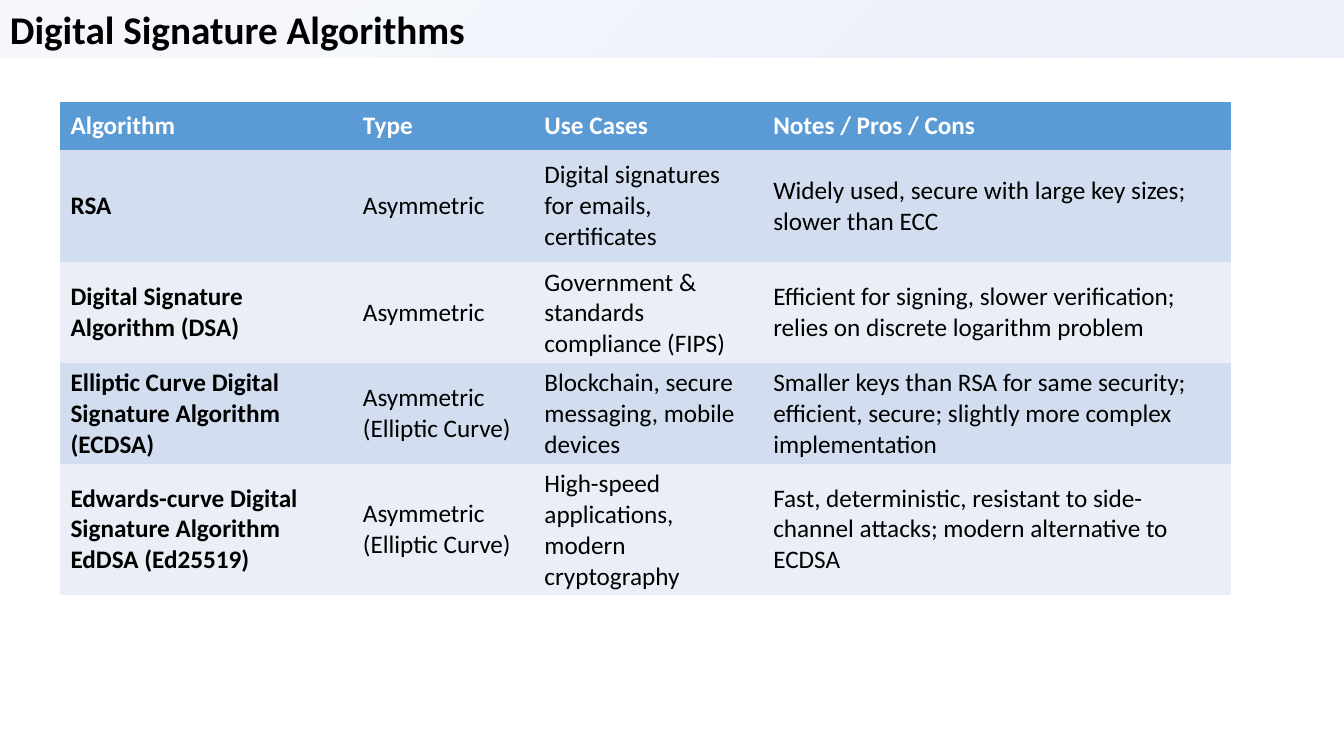
from dataclasses import dataclass

from pptx import Presentation
from pptx import util as u
from pptx.dml.color import RGBColor
from pptx.enum import shapes, text
from pptx.oxml import parse_xml
from pptx.oxml.ns import nsdecls, qn


@dataclass(frozen=True)
class Theme:
    font: str = "Calibri"
    title_size: int = 28
    table_size: int = 18
    ink: str = "000000"
    white: str = "FFFFFF"
    header: str = "5B9BD5"
    bands: tuple = ("D2DEEF", "EAEFF7")
    glow: str = "4472C4"
    glow_stops: tuple = ((26, 10), (76, 5))  # position %, opacity %


COL_WIDTHS = (2.9, 1.8, 2.27, 4.64)
ROW_HEIGHTS = (0.48, 1.11, 0.82, 0.79, 0.82)
ALGORITHMS = (
    ("Algorithm", "Type", "Use Cases", "Notes / Pros / Cons"),
    ("RSA", "Asymmetric", "Digital signatures for emails, certificates",
     "Widely used, secure with large key sizes; slower than ECC"),
    ("Digital Signature Algorithm (DSA)", "Asymmetric",
     "Government & standards compliance (FIPS)",
     "Efficient for signing, slower verification; "
     "relies on discrete logarithm problem"),
    ("Elliptic Curve Digital Signature Algorithm (ECDSA)",
     "Asymmetric (Elliptic Curve)",
     "Blockchain, secure messaging, mobile devices",
     "Smaller keys than RSA for same security; efficient, secure; "
     "slightly more complex implementation"),
    ("Edwards-curve Digital Signature Algorithm EdDSA (Ed25519)",
     "Asymmetric (Elliptic Curve)",
     "High-speed applications, modern cryptography",
     "Fast, deterministic, resistant to side-channel attacks; "
     "modern alternative to ECDSA"),
)


def write(tf, content, *, font, size, color, bold=False):
    tf.word_wrap = True
    p = tf.paragraphs[0]
    p.alignment = text.PP_ALIGN.LEFT
    r = p.add_run()
    r.text = content
    r.font.name = font
    r.font.size = u.Pt(size)
    r.font.bold = bold
    r.font.color.rgb = RGBColor.from_string(color)


class SlideBuilder:
    def __init__(self, slide, theme):
        self.s = slide
        self.theme = theme

    def glow_fill(self, sp):
        """Fill with a translucent radial gradient centred bottom right."""
        stops = "".join(
            f'<a:gs pos="{pos * 1000}"><a:srgbClr val="{self.theme.glow}">'
            f'<a:alpha val="{alpha * 1000}"/></a:srgbClr></a:gs>'
            for pos, alpha in self.theme.glow_stops)
        grad = parse_xml(
            f'<a:gradFill {nsdecls("a")}><a:gsLst>{stops}</a:gsLst>'
            '<a:path path="circle"><a:fillToRect l="100000" t="100000"/>'
            '</a:path></a:gradFill>')
        sp.fill.background()
        sp_pr = sp.element.spPr
        sp_pr.replace(sp_pr.find(qn("a:noFill")), grad)

    def title_bar(self, content, left, top, width, height):
        sp = self.s.shapes.add_shape(
            shapes.MSO_SHAPE.RECTANGLE,
            *map(u.Inches, (left, top, width, height)))
        sp.shadow.inherit = False
        sp.line.fill.background()
        self.glow_fill(sp)
        tf = sp.text_frame
        tf.auto_size = text.MSO_AUTO_SIZE.SHAPE_TO_FIT_TEXT
        tf.vertical_anchor = text.MSO_ANCHOR.TOP
        write(tf, content, font=self.theme.font, size=self.theme.title_size,
              color=self.theme.ink, bold=True)

    def table(self, rows, left, top, col_widths, row_heights):
        th = self.theme
        table = self.s.shapes.add_table(
            len(rows), len(col_widths),
            *map(u.Inches, (left, top, sum(col_widths), sum(row_heights)))).table
        for col, width in zip(table.columns, col_widths):
            col.width = u.Inches(width)
        for i, (row, height, values) in enumerate(
                zip(table.rows, row_heights, rows)):
            row.height = u.Inches(height)
            is_header = i == 0
            fill = th.header if is_header else th.bands[(i - 1) % 2]
            for j, (cell, value) in enumerate(zip(row.cells, values)):
                cell.fill.solid()
                cell.fill.fore_color.rgb = RGBColor.from_string(fill)
                for side in ("L", "R", "T", "B"):
                    self.clear_border(cell, side)
                cell.vertical_anchor = text.MSO_ANCHOR.MIDDLE
                write(cell.text_frame, value, font=th.font, size=th.table_size,
                      color=th.white if is_header else th.ink,
                      bold=is_header or j == 0)

    @staticmethod
    def clear_border(cell, side):
        tc_pr = cell._tc.get_or_add_tcPr()
        border = parse_xml(
            f'<a:ln{side} {nsdecls("a")} w="0"><a:noFill/></a:ln{side}>')
        tc_pr.find(qn("a:solidFill")).addprevious(border)


def main():
    prs = Presentation()
    prs.slide_width, prs.slide_height = u.Inches(13.33), u.Inches(7.5)
    slide = SlideBuilder(prs.slides.add_slide(prs.slide_layouts[6]), Theme())
    slide.title_bar("Digital Signature Algorithms", 0, 0, 13.33, 0.57)
    slide.table(ALGORITHMS, 0.6, 1.01, COL_WIDTHS, ROW_HEIGHTS)
    prs.save("out.pptx")


if __name__ == "__main__":
    main()
